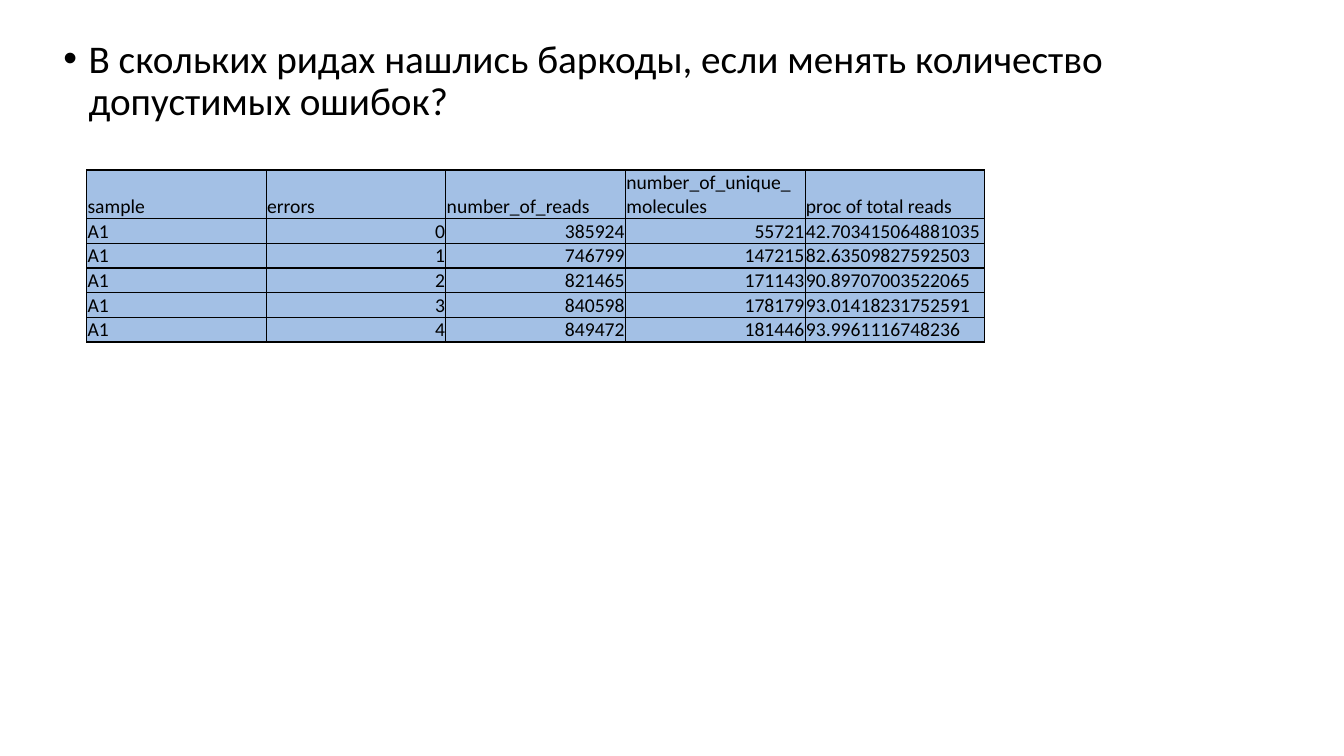
from lxml import etree
from pptx import Presentation
from pptx.dml.color import RGBColor
from pptx.enum.text import MSO_ANCHOR, PP_ALIGN
from pptx.oxml.ns import qn
from pptx.util import Pt

LEFT, RIGHT = PP_ALIGN.LEFT, PP_ALIGN.RIGHT
BOTTOM = MSO_ANCHOR.BOTTOM
BLACK = RGBColor(0x00, 0x00, 0x00)
CELL_BLUE = RGBColor(0xA3, 0xC0, 0xE5)

QUESTION = "В скольких ридах нашлись баркоды, если менять количество допустимых ошибок?"
HEADER = ("sample", "errors", "number_of_reads", "number_of_unique_molecules", "proc of total reads")
BARCODE_COUNTS = (
    ("A1", "0", "385924", "55721", "42.703415064881035"),
    ("A1", "1", "746799", "147215", "82.63509827592503"),
    ("A1", "2", "821465", "171143", "90.89707003522065"),
    ("A1", "3", "840598", "178179", "93.01418231752591"),
    ("A1", "4", "849472", "181446", "93.9961116748236"),
)
COLUMN_ALIGNMENT = (LEFT, RIGHT, RIGHT, RIGHT, LEFT)


class SlideBuilder:
    """Holds the text style and the current slide."""

    def __init__(self, slide, font="Calibri", color=BLACK):
        self.slide = slide
        self.font = font
        self.color = color

    def style(self, paragraph, size, alignment=LEFT):
        paragraph.alignment = alignment
        paragraph.font.name = self.font
        paragraph.font.size = Pt(size)
        paragraph.font.color.rgb = self.color

    def bullet(self, text, left, top, width, height, size):
        frame = self.slide.shapes.add_textbox(Pt(left), Pt(top), Pt(width), Pt(height)).text_frame
        frame.word_wrap = True
        paragraph = frame.paragraphs[0]
        paragraph.text = text
        paragraph.line_spacing = 0.9
        paragraph.space_before = Pt(10)
        self.style(paragraph, size)
        properties = paragraph._p.get_or_add_pPr()
        properties.set("marL", str(Pt(18)))
        properties.set("indent", str(Pt(-18)))
        bullet_font = etree.Element(qn("a:buFont"), typeface="Arial")
        bullet_mark = etree.Element(qn("a:buChar"), char="•")
        default_run = properties.find(qn("a:defRPr"))
        default_run.addprevious(bullet_font)
        default_run.addprevious(bullet_mark)

    def border(self, cell, width=1):
        properties = cell._tc.get_or_add_tcPr()
        for position, side in enumerate(("lnL", "lnR", "lnT", "lnB")):
            line = etree.Element(qn(f"a:{side}"), w=str(Pt(width)))
            fill = etree.SubElement(line, qn("a:solidFill"))
            etree.SubElement(fill, qn("a:srgbClr"), val=str(self.color))
            properties.insert(position, line)

    def cell(self, cell, text, size, alignment):
        cell.margin_left = cell.margin_right = cell.margin_top = Pt(0.6)
        cell.margin_bottom = Pt(0)
        cell.vertical_anchor = BOTTOM
        cell.fill.solid()
        cell.fill.fore_color.rgb = CELL_BLUE
        paragraph = cell.text_frame.paragraphs[0]
        paragraph.text = text
        self.style(paragraph, size, alignment)
        self.border(cell)

    def table(self, header, records, alignments, left, top, width, header_height, row_height, size):
        height = header_height + row_height * len(records)
        table = self.slide.shapes.add_table(
            len(records) + 1, len(header), Pt(left), Pt(top), Pt(width), Pt(height)
        ).table
        for row in table.rows:
            row.height = Pt(row_height)
        table.rows[0].height = Pt(header_height)
        for column, title in enumerate(header):
            self.cell(table.cell(0, column), title, size, LEFT)
        for number, record in enumerate(records, 1):
            for column, (value, alignment) in enumerate(zip(record, alignments)):
                self.cell(table.cell(number, column), value, size, alignment)


def main():
    presentation = Presentation()
    presentation.slide_width = Pt(960)
    presentation.slide_height = Pt(540)
    builder = SlideBuilder(presentation.slides.add_slide(presentation.slide_layouts[6]))
    builder.bullet(QUESTION, 38.2, 24.5, 828, 342.7, 28)
    builder.table(HEADER, BARCODE_COUNTS, COLUMN_ALIGNMENT, 61.9, 121.5, 641.5, 34.7, 17.65, 14)
    presentation.save("out.pptx")


if __name__ == "__main__":
    main()
